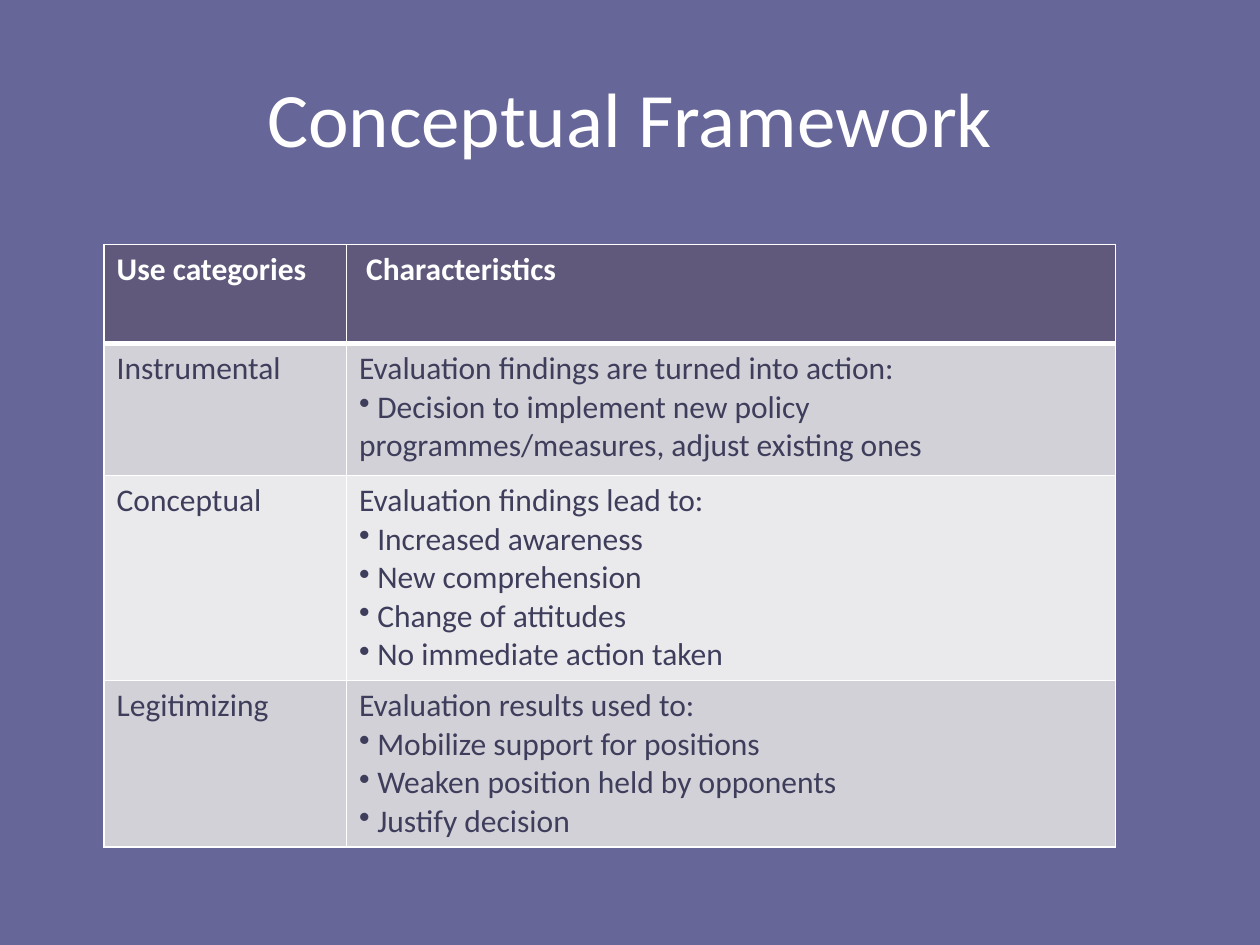
from pptx import Presentation
from pptx.dml.color import RGBColor
from pptx.enum.text import MSO_ANCHOR, PP_ALIGN
from pptx.oxml.xmlchemy import OxmlElement
from pptx.util import Pt

BACKGROUND = RGBColor(0x66, 0x66, 0x99)
WHITE = RGBColor(0xFF, 0xFF, 0xFF)
HEADER_FILL = RGBColor(0x60, 0x59, 0x7B)
DARK_BAND = RGBColor(0xD2, 0xD1, 0xD7)
LIGHT_BAND = RGBColor(0xEA, 0xEA, 0xEC)
BODY_TEXT = RGBColor(0x3E, 0x3E, 0x5C)

COLUMN_WIDTHS = [Pt(138.5), Pt(439.5)]
ROW_HEIGHTS = [Pt(56.5), Pt(75.5), Pt(117), Pt(95)]
HEADINGS = ["Use categories", " Characteristics"]
USES = [
    ("Instrumental", "Evaluation findings are turned into action:",
     ["Decision to implement new policy programmes/measures, adjust existing ones"]),
    ("Conceptual", "Evaluation findings lead to:",
     ["Increased awareness", "New comprehension", "Change of attitudes",
      "No immediate action taken"]),
    ("Legitimizing", "Evaluation results used to:",
     ["Mobilize support for positions", "Weaken position held by opponents",
      "Justify decision"]),
]


def write(paragraph, text, size=18, color=BODY_TEXT, bold=False,
          align=PP_ALIGN.LEFT, bullet=False):
    paragraph.alignment = align
    run = paragraph.add_run()
    run.text = f" {text}" if bullet else text
    run.font.name = "Calibri"
    run.font.size = Pt(size)
    run.font.bold = bold
    run.font.color.rgb = color
    if bullet:
        properties = paragraph._p.get_or_add_pPr()
        mark = OxmlElement("a:buChar")
        mark.set("char", "•")
        properties.append(mark)


def style_cell(cell, fill, top=1, bottom=1):
    """Fill the cell and give it white borders of the given widths."""
    properties = cell._tc.get_or_add_tcPr()
    for side, width in (("L", 1), ("R", 1), ("T", top), ("B", bottom)):
        border = OxmlElement(f"a:ln{side}")
        border.set("w", str(Pt(width)))
        solid = OxmlElement("a:solidFill")
        color = OxmlElement("a:srgbClr")
        color.set("val", str(WHITE))
        solid.append(color)
        border.append(solid)
        properties.append(border)
    cell.fill.solid()
    cell.fill.fore_color.rgb = fill


prs = Presentation()
prs.slide_width, prs.slide_height = Pt(720), Pt(540)
slide = prs.slides.add_slide(prs.slide_layouts[5])
slide.background.fill.solid()
slide.background.fill.fore_color.rgb = BACKGROUND

title = slide.shapes.title
title.left, title.top, title.width, title.height = Pt(36), Pt(21.6), Pt(648), Pt(90)
title.text_frame.vertical_anchor = MSO_ANCHOR.MIDDLE
write(title.text_frame.paragraphs[0], "Conceptual Framework", size=44,
      color=WHITE, align=PP_ALIGN.CENTER)

framework = slide.shapes.add_table(
    len(USES) + 1, len(HEADINGS), Pt(59.5), Pt(139.75),
    sum(COLUMN_WIDTHS), sum(ROW_HEIGHTS)).table
for column, width in zip(framework.columns, COLUMN_WIDTHS):
    column.width = width
for row, height in zip(framework.rows, ROW_HEIGHTS):
    row.height = height

for column, heading in enumerate(HEADINGS):
    cell = framework.cell(0, column)
    style_cell(cell, HEADER_FILL, bottom=3)
    write(cell.text_frame.paragraphs[0], heading, color=WHITE, bold=True)

for row, (category, lead, characteristics) in enumerate(USES, start=1):
    category_cell, characteristics_cell = framework.rows[row].cells
    for cell, text in ((category_cell, category), (characteristics_cell, lead)):
        style_cell(cell, DARK_BAND if row % 2 else LIGHT_BAND,
                   top=3 if row == 1 else 1)
        write(cell.text_frame.paragraphs[0], text)
    for characteristic in characteristics:
        write(characteristics_cell.text_frame.add_paragraph(), characteristic,
              bullet=True)

prs.save("out.pptx")
